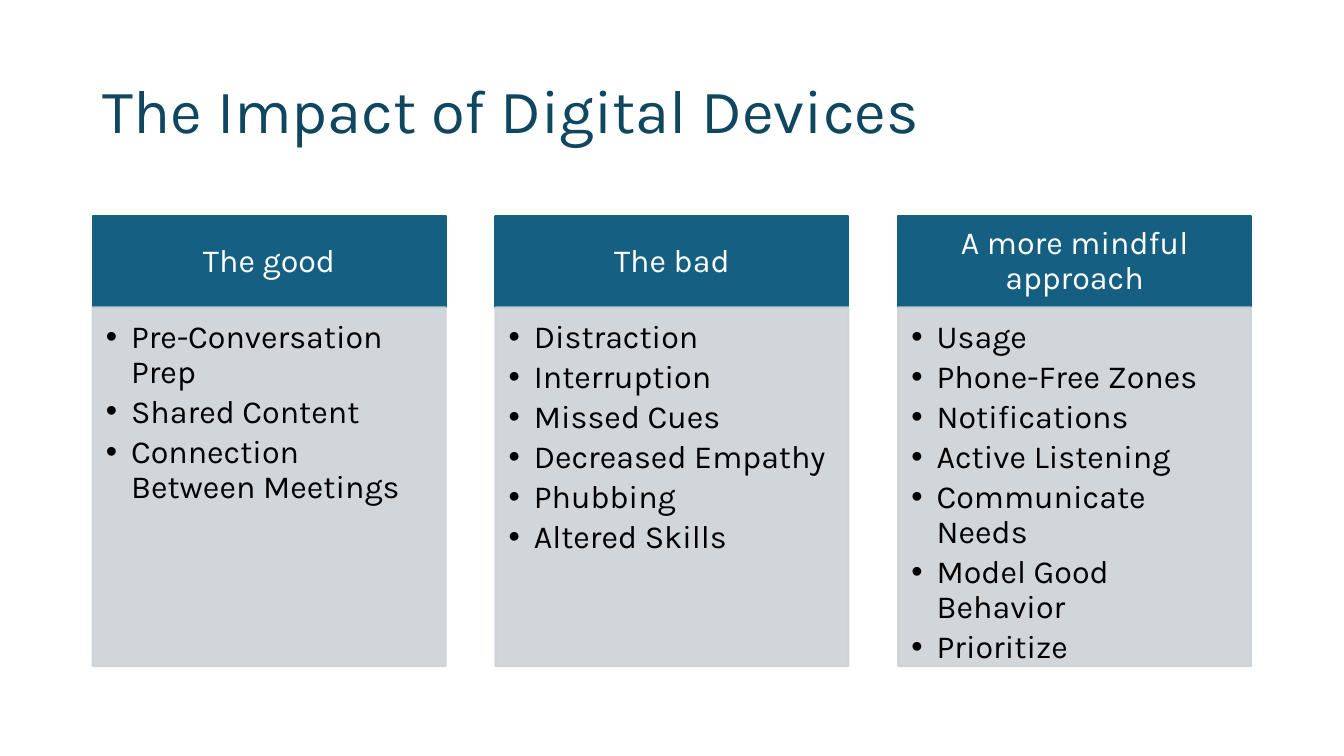
from lxml import etree
from pptx import Presentation
from pptx import util as u
from pptx.dml.color import RGBColor
from pptx.enum import shapes, text
from pptx.oxml.ns import qn

COLUMNS = [
    ("The good",
     ["Pre-Conversation Prep", "Shared Content", "Connection Between Meetings"]),
    ("The bad",
     ["Distraction", "Interruption", "Missed Cues", "Decreased Empathy",
      "Phubbing", "Altered Skills"]),
    ("A more mindful approach",
     ["Usage", "Phone-Free Zones", "Notifications", "Active Listening",
      "Communicate Needs", "Model Good Behavior", "Prioritize"]),
]


def rgb(hex_code):
    return RGBColor.from_string(hex_code)


class ImpactSlide:
    FONT = "Karla"
    TITLE, HEADER, PANEL = "0F4761", "156082", "CCD2D8"
    WHITE, BLACK = "FFFFFF", "000000"
    BODY_SIZE = 23

    def __init__(self, deck):
        self.slide = deck.slides.add_slide(deck.slide_layouts[5])

    def style(self, paragraph, size, color, align):
        paragraph.alignment = align
        paragraph.line_spacing = 0.9
        paragraph.font.name = self.FONT
        paragraph.font.size = u.Pt(size)
        paragraph.font.color.rgb = rgb(color)

    def title(self, wording, left, top, width, height):
        heading = self.slide.shapes.title
        heading.left, heading.top = u.Inches(left), u.Inches(top)
        heading.width, heading.height = u.Inches(width), u.Inches(height)
        frame = heading.text_frame
        frame.text = wording
        frame.word_wrap = True
        frame.auto_size = text.MSO_AUTO_SIZE.NONE
        frame.vertical_anchor = text.MSO_ANCHOR.MIDDLE
        self.style(frame.paragraphs[0], 44, self.TITLE, text.PP_ALIGN.LEFT)

    def block(self, box, color, insets, anchor, alpha=None):
        """Draw a filled rectangle and return its text frame."""
        rect = self.slide.shapes.add_shape(
            shapes.MSO_SHAPE.RECTANGLE, *map(u.Inches, box))
        rect.shadow.inherit = False
        rect.fill.solid()
        rect.line.width = u.Pt(1.5)
        for fill in (rect.fill, rect.line.fill):
            fill.solid()
            fill.fore_color.rgb = rgb(color)
        if alpha is not None:
            for tint in rect.element.spPr.iter(qn("a:srgbClr")):
                etree.SubElement(tint, qn("a:alpha"), val=str(alpha * 1000))
        frame = rect.text_frame
        frame.word_wrap = True
        frame.vertical_anchor = anchor
        (frame.margin_left, frame.margin_top,
         frame.margin_right, frame.margin_bottom) = map(u.Inches, insets)
        return frame

    def header(self, wording, *box):
        frame = self.block(box, self.HEADER, (0.18, 0.1, 0.18, 0.1),
                           text.MSO_ANCHOR.MIDDLE)
        frame.text = wording
        self.style(frame.paragraphs[0], self.BODY_SIZE, self.WHITE,
                   text.PP_ALIGN.CENTER)

    def bullet_panel(self, points, *box):
        frame = self.block(box, self.PANEL, (0.13, 0.13, 0.18, 0.2),
                           text.MSO_ANCHOR.TOP, alpha=90)
        frame.text = "\n".join(points)
        for point in frame.paragraphs:
            point.level = 1
            point.space_after = u.Pt(3.8)
            props = point._p.get_or_add_pPr()
            props.set("marL", str(u.Inches(0.25)))
            props.set("indent", str(u.Inches(-0.25)))
            etree.SubElement(props, qn("a:buFont"), typeface="Arial")
            etree.SubElement(props, qn("a:buChar"), char="•")
            self.style(point, self.BODY_SIZE, self.BLACK, text.PP_ALIGN.LEFT)


def main():
    deck = Presentation()
    deck.slide_width, deck.slide_height = u.Inches(13.33), u.Inches(7.5)
    impact = ImpactSlide(deck)

    # Title
    impact.title("The Impact of Digital Devices", 0.92, 0.4, 11.5, 1.45)

    # Three columns: header above its bullet panel
    first_left, pitch, width = 0.92, 3.995, 3.5
    top, header_height, panel_height = 2.14, 0.91, 3.56
    for index, (heading, points) in enumerate(COLUMNS):
        left = first_left + index * pitch
        impact.header(heading, left, top, width, header_height)
        impact.bullet_panel(points, left, top + header_height, width, panel_height)

    deck.save("out.pptx")


if __name__ == "__main__":
    main()
